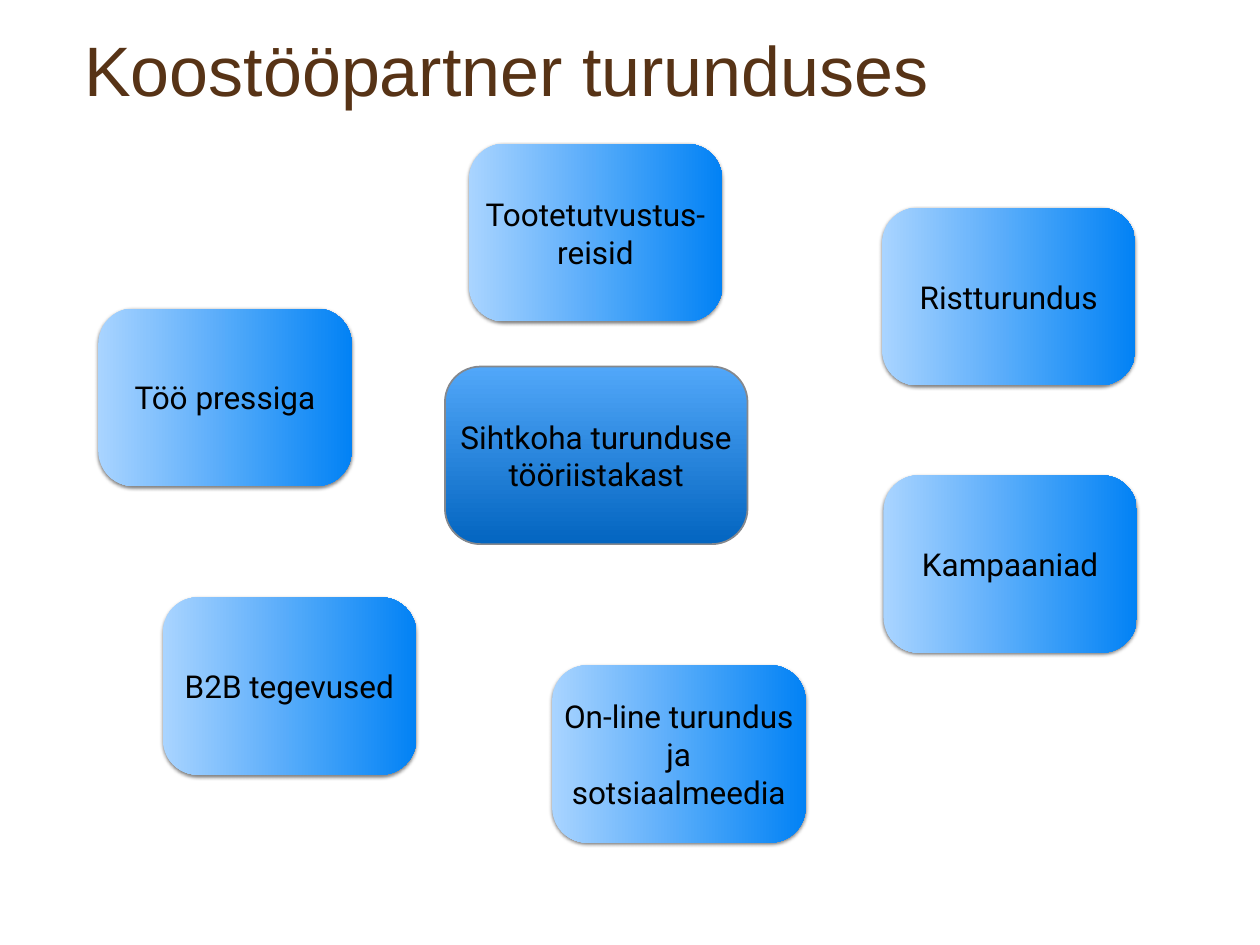
import pptx
import pptx.util
import pptx.dml.color
import pptx.enum.shapes
import pptx.enum.text
import pptx.oxml.ns
import lxml.etree

Cm, Pt = pptx.util.Cm, pptx.util.Pt
RGBColor = pptx.dml.color.RGBColor

BROWN = RGBColor(0x57, 0x33, 0x16)
BLACK = RGBColor(0x00, 0x00, 0x00)
GREY = RGBColor(0x85, 0x88, 0x8D)
TOOL_COLORS = RGBColor(0xA9, 0xD4, 0xFF), RGBColor(0x02, 0x82, 0xF5)
CENTER_COLORS = RGBColor(0x51, 0xA7, 0xF9), RGBColor(0x03, 0x65, 0xC0)

BOX_HEIGHT = 3.58
TOOL_WIDTH = 5.11
CENTER_WIDTH = 6.1

# Marketing tools: label, left, top (cm)
TOOLS = [
    ("Ristturundus", 17.78, 4.19),
    ("Kampaaniad", 17.81, 9.58),
    ("On-line turundus ja sotsiaalmeedia", 11.13, 13.41),
    ("Töö pressiga", 1.98, 6.22),
    ("Tootetutvustus-reisid", 9.45, 2.9),
    ("B2B tegevused", 3.28, 12.04),
]


def set_margins(tf, left=0, top=0, right=0, bottom=0):
    tf.margin_left, tf.margin_top = Cm(left), Cm(top)
    tf.margin_right, tf.margin_bottom = Cm(right), Cm(bottom)


def format_text(p, font, size, color, align):
    p.alignment = align
    for r in p.runs:
        r.font.name = font
        r.font.size = Pt(size)
        r.font.color.rgb = color


def add_title(slide, text):
    sp = slide.shapes.title
    sp.left, sp.top, sp.width, sp.height = Cm(1.45), Cm(0.25), Cm(22.86), Cm(1.78)
    tf = sp.text_frame
    tf.text = text
    tf.word_wrap = True
    tf.auto_size = pptx.enum.text.MSO_AUTO_SIZE.NONE
    tf.vertical_anchor = pptx.enum.text.MSO_ANCHOR.TOP
    set_margins(tf, left=0.25, top=0.28, right=0.25)
    format_text(tf.paragraphs[0], "Arial", 40, BROWN,
                pptx.enum.text.PP_ALIGN.LEFT)


def add_box(slide, text, left, top, width, colors, angle):
    """Add a rounded box with a two-colour gradient and centred text."""
    sp = slide.shapes.add_shape(
        pptx.enum.shapes.MSO_SHAPE.ROUNDED_RECTANGLE,
        Cm(left), Cm(top), Cm(width), Cm(BOX_HEIGHT))
    sp.adjustments[0] = 0.2
    sp.shadow.inherit = False
    sp.fill.gradient()
    sp.fill.gradient_angle = angle
    for stop, color in zip(sp.fill.gradient_stops, colors):
        stop.color.rgb = color

    tf = sp.text_frame
    tf.text = text
    tf.word_wrap = True
    tf.vertical_anchor = pptx.enum.text.MSO_ANCHOR.MIDDLE
    set_margins(tf)
    format_text(tf.paragraphs[0], "Roboto", 18, BLACK,
                pptx.enum.text.PP_ALIGN.CENTER)
    return sp


def add_shadow(sp):
    """Put a soft half-transparent shadow just below the shape."""
    qn = pptx.oxml.ns.qn
    effects = sp.element.spPr.find(qn("a:effectLst"))
    shadow = lxml.etree.SubElement(
        effects, qn("a:outerShdw"), blurRad=str(Pt(2)), dist=str(Pt(1)),
        dir="5400000", rotWithShape="0")
    color = lxml.etree.SubElement(shadow, qn("a:srgbClr"), val=str(BLACK))
    lxml.etree.SubElement(color, qn("a:alpha"), val="50000")


def main():
    prs = pptx.Presentation()
    prs.slide_width, prs.slide_height = Cm(25.4), Cm(19.05)
    slide = prs.slides.add_slide(prs.slide_layouts.get_by_name("Title Only"))
    add_title(slide, "Koostööpartner turunduses")

    # Tools around the centre
    for text, left, top in TOOLS:
        sp = add_box(slide, text, left, top, TOOL_WIDTH, TOOL_COLORS, 0)
        sp.line.fill.background()
        add_shadow(sp)

    # Central toolbox, shaded downwards
    sp = add_box(slide, "Sihtkoha turunduse tööriistakast", 8.97, 7.39,
                 CENTER_WIDTH, CENTER_COLORS, 270)
    sp.line.color.rgb = GREY
    sp.line.width = Pt(1)

    prs.save("out.pptx")


if __name__ == "__main__":
    main()
